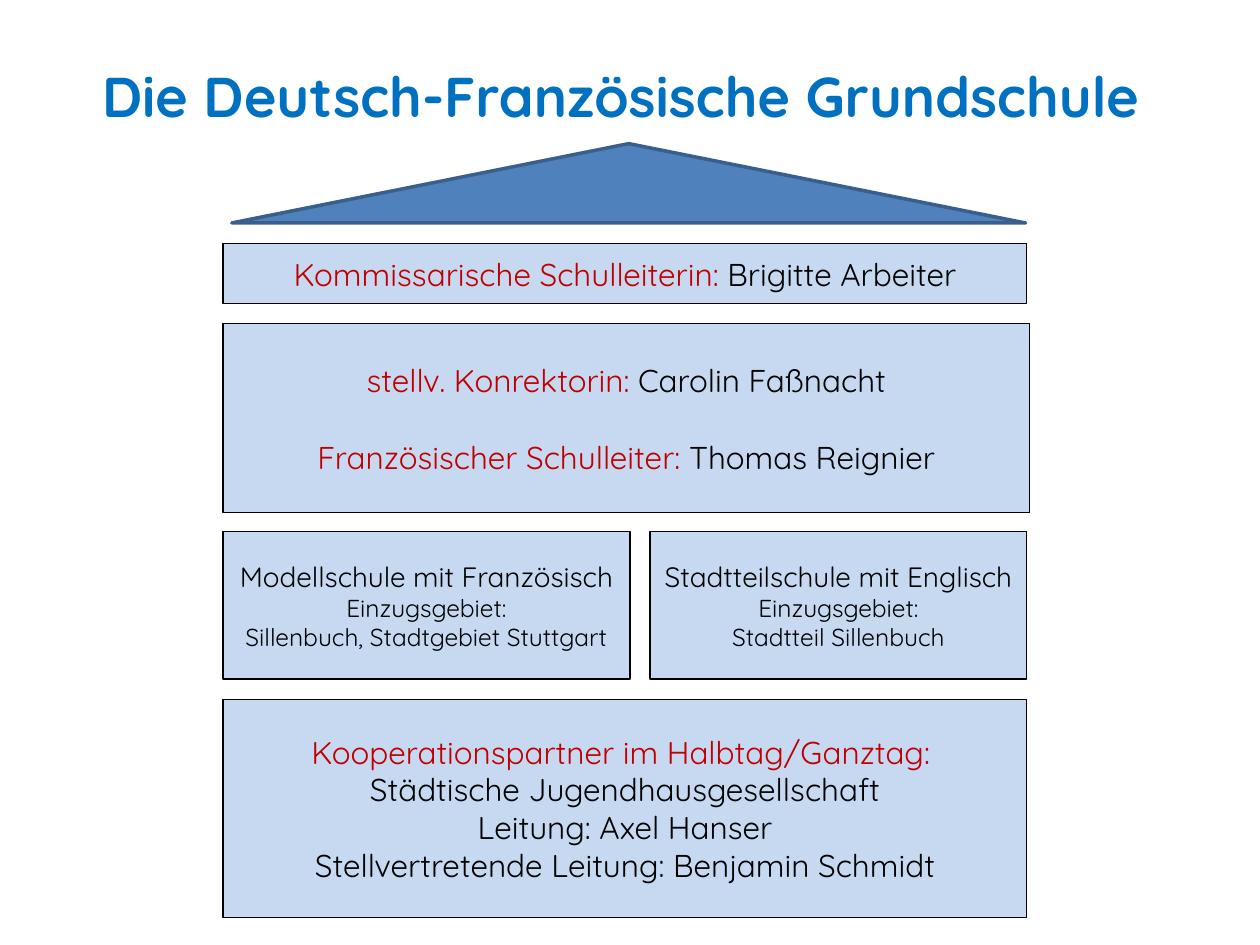
import pptx
import pptx.util
import pptx.dml.color
import pptx.enum.shapes
import pptx.enum.text

Inches = pptx.util.Inches
Pt = pptx.util.Pt
RGBColor = pptx.dml.color.RGBColor
SHAPES = pptx.enum.shapes.MSO_SHAPE
CENTER = pptx.enum.text.PP_ALIGN.CENTER
MIDDLE = pptx.enum.text.MSO_ANCHOR.MIDDLE

TITLE_BLUE = RGBColor(0x00, 0x70, 0xC0)
ROOF_BLUE = RGBColor(0x4F, 0x81, 0xBD)
ROOF_EDGE = RGBColor(0x3A, 0x5F, 0x8C)
PALE_BLUE = RGBColor(0xC6, 0xD9, 0xF1)
RED = RGBColor(0xC0, 0x00, 0x00)
BLACK = RGBColor(0x00, 0x00, 0x00)
FONT = "Quicksand"


def add_lines(tf, lines, gap=0):
    """Write centred lines, each a list of (text, size, colour) runs."""
    tf.vertical_anchor = MIDDLE
    for i, runs in enumerate(lines):
        p = tf.add_paragraph() if i else tf.paragraphs[0]
        p.alignment = CENTER
        if i and gap:
            p.space_before = Pt(gap)
        for text, size, color in runs:
            r = p.add_run()
            r.text = text
            r.font.name = FONT
            r.font.size = Pt(size)
            r.font.color.rgb = color


def add_outlined(s, kind, box, fill, edge, weight):
    """Add a filled and outlined preset shape in a box given in inches."""
    sp = s.shapes.add_shape(kind, *map(Inches, box))
    sp.shadow.inherit = False
    sp.fill.solid()
    sp.fill.fore_color.rgb = fill
    sp.line.color.rgb = edge
    sp.line.width = Pt(weight)
    return sp


def add_title(s, box, text):
    """Add the bold slide heading."""
    tf = s.shapes.add_textbox(*map(Inches, box)).text_frame
    tf.word_wrap = True
    add_lines(tf, [[(text, 32, TITLE_BLUE)]])
    tf.paragraphs[0].runs[0].font.bold = True


def add_roof(s, box):
    """Add the triangular roof of the school house."""
    add_outlined(s, SHAPES.ISOSCELES_TRIANGLE, box, ROOF_BLUE, ROOF_EDGE, 2)


def add_floor(s, box, lines, gap=0):
    """Add one block of the school house with its lines."""
    sp = add_outlined(s, SHAPES.RECTANGLE, box, PALE_BLUE, BLACK, 0.75)
    sp.text_frame.word_wrap = False
    add_lines(sp.text_frame, lines, gap)


def role(label, name):
    """Return the runs of a red role followed by a black name."""
    return [(label + ": ", 18, RED), (name, 18, BLACK)]


def branch(heading, area):
    """Return the lines of a school branch and its catchment area."""
    return [[(heading, 16, BLACK)], [("Einzugsgebiet:", 14, BLACK)], [(area, 14, BLACK)]]


def add_house(s, left, top, width):
    """Stack the roof and the floors of the school house."""
    add_roof(s, (left + 0.07, top, 6.3, 0.63))
    add_floor(s, (left, top + 0.79, width, 0.48),
              [role("Kommissarische Schulleiterin", "Brigitte Arbeiter")])
    add_floor(s, (left, top + 1.43, width + 0.02, 1.5),
              [role("stellv. Konrektorin", "Carolin Faßnacht"),
               role("Französischer Schulleiter", "Thomas Reignier")], gap=22)
    add_floor(s, (left, top + 3.08, 3.23, 1.17),
              branch("Modellschule mit Französisch", "Sillenbuch, Stadtgebiet Stuttgart"))
    add_floor(s, (left + 3.39, top + 3.08, width - 3.39, 1.17),
              branch("Stadtteilschule mit Englisch", "Stadtteil Sillenbuch"))
    partner = ["Städtische Jugendhausgesellschaft", "Leitung: Axel Hanser",
               "Stellvertretende Leitung: Benjamin Schmidt"]
    add_floor(s, (left, top + 4.41, width, 1.73),
              [[("Kooperationspartner im Halbtag/Ganztag: ", 18, RED)]]
              + [[(text, 18, BLACK)] for text in partner])


def main():
    """Build and save the slide."""
    prs = pptx.Presentation()
    prs.slide_width, prs.slide_height = Inches(10), Inches(7.5)
    s = prs.slides.add_slide(prs.slide_layouts[6])
    add_title(s, (0.2, 0.13, 9.58, 1.25), "Die Deutsch-Französische Grundschule ")
    add_house(s, 1.77, 1.14, 6.38)
    prs.save("out.pptx")


if __name__ == "__main__":
    main()
